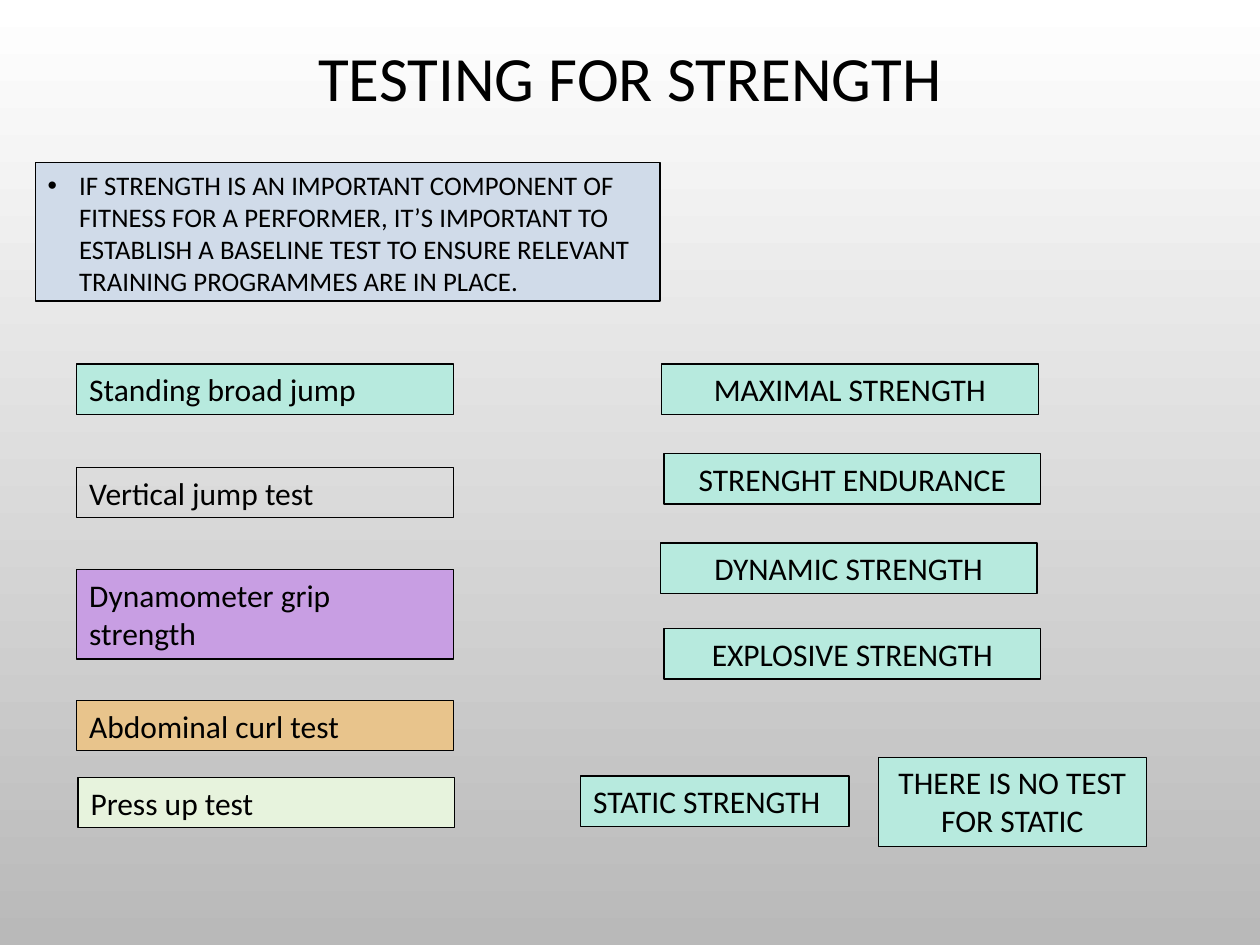
from dataclasses import dataclass
from typing import Optional

from lxml import etree
from pptx import Presentation
from pptx import util as u
from pptx.dml.color import RGBColor
from pptx.enum import text
from pptx.oxml import ns

BLACK = RGBColor(0x00, 0x00, 0x00)
WHITE = RGBColor(0xFF, 0xFF, 0xFF)
GREY = RGBColor(0xB9, 0xB9, 0xB9)
BLUE = RGBColor(0xD0, 0xDB, 0xE9)
MINT = RGBColor(0xB7, 0xEA, 0xDE)
PURPLE = RGBColor(0xC8, 0x9E, 0xE3)
ORANGE = RGBColor(0xE8, 0xC4, 0x8C)
GREEN = RGBColor(0xE7, 0xF3, 0xDD)
LEFT, CENTER = text.PP_ALIGN.LEFT, text.PP_ALIGN.CENTER
WIDE, NARROW = 2.99, 2.13
ONE_LINE, TWO_LINES = 0.4, 0.71
INTRO = (
    "IF STRENGTH IS AN IMPORTANT COMPONENT OF FITNESS FOR A PERFORMER, "
    "IT’S IMPORTANT TO ESTABLISH A BASELINE TEST TO ENSURE RELEVANT "
    "TRAINING PROGRAMMES ARE IN PLACE."
)


@dataclass
class Label:
    words: str
    left: float
    top: float
    fill: Optional[RGBColor] = MINT
    align: text.PP_ALIGN = CENTER
    width: float = WIDE
    height: float = ONE_LINE
    size: float = 18


TESTS = [
    Label("Standing broad jump", 0.61, 2.89, MINT, LEFT),
    Label("Vertical jump test", 0.61, 3.71, None, LEFT),
    Label("Dynamometer grip strength", 0.61, 4.52, PURPLE, LEFT, height=TWO_LINES),
    Label("Abdominal curl test", 0.61, 5.56, ORANGE, LEFT),
    Label("Press up test", 0.62, 6.17, GREEN, LEFT),
]
STRENGTHS = [
    Label("MAXIMAL STRENGTH", 5.25, 2.89),
    Label("STRENGHT ENDURANCE", 5.27, 3.6),
    Label("DYNAMIC STRENGTH", 5.24, 4.31),
    Label("EXPLOSIVE STRENGTH", 5.27, 4.99),
    Label("STATIC STRENGTH", 4.61, 6.16, align=LEFT, width=NARROW),
    Label("THERE IS NO TEST FOR STATIC", 6.97, 6.01, width=NARROW, height=TWO_LINES),
]


def write(box, words: str, size: float, align: text.PP_ALIGN):
    frame = box.text_frame
    frame.text = words
    frame.word_wrap = True
    frame.auto_size = text.MSO_AUTO_SIZE.NONE
    para = frame.paragraphs[0]
    para.alignment = align
    for span in para.runs:
        span.font.name = "Calibri"
        span.font.size = u.Pt(size)
        span.font.color.rgb = BLACK
    return para


def draw_label(page, label: Label):
    box = page.shapes.add_textbox(
        u.Inches(label.left), u.Inches(label.top),
        u.Inches(label.width), u.Inches(label.height),
    )
    if label.fill is not None:
        box.fill.solid()
        box.fill.fore_color.rgb = label.fill
    box.line.color.rgb = BLACK
    box.line.width = u.Pt(0.75)
    return write(box, label.words, label.size, label.align)


def add_bullet(para, indent: float) -> None:
    props = para._p.get_or_add_pPr()
    props.set("marL", str(u.Inches(indent)))
    props.set("indent", str(u.Inches(-indent)))
    etree.SubElement(props, ns.qn("a:buFont"), typeface="Arial")
    etree.SubElement(props, ns.qn("a:buChar"), char="•")


def paint_background(page) -> None:
    fill = page.background.fill
    fill.gradient()
    fill.gradient_angle = 270
    for stop, color, position in zip(fill.gradient_stops, (WHITE, GREY), (0, 1)):
        stop.color.rgb = color
        stop.position = position


def place_title(page) -> None:
    title = page.shapes.title
    title.left, title.top = u.Inches(0.5), u.Inches(0.3)
    title.width, title.height = u.Inches(9), u.Inches(0.69)
    para = write(title, "TESTING FOR STRENGTH", 36, CENTER)
    para.line_spacing = 0.9
    title.text_frame.vertical_anchor = text.MSO_ANCHOR.MIDDLE


def main() -> None:
    deck = Presentation()
    deck.slide_width, deck.slide_height = u.Inches(10), u.Inches(7.5)
    page = deck.slides.add_slide(deck.slide_layouts[5])
    paint_background(page)
    place_title(page)
    intro = draw_label(page, Label(INTRO, 0.28, 1.29, BLUE, LEFT, 4.96, 1.1, 15.3))
    add_bullet(intro, 0.25)
    for label in TESTS + STRENGTHS:
        draw_label(page, label)
    deck.save("out.pptx")


if __name__ == "__main__":
    main()
